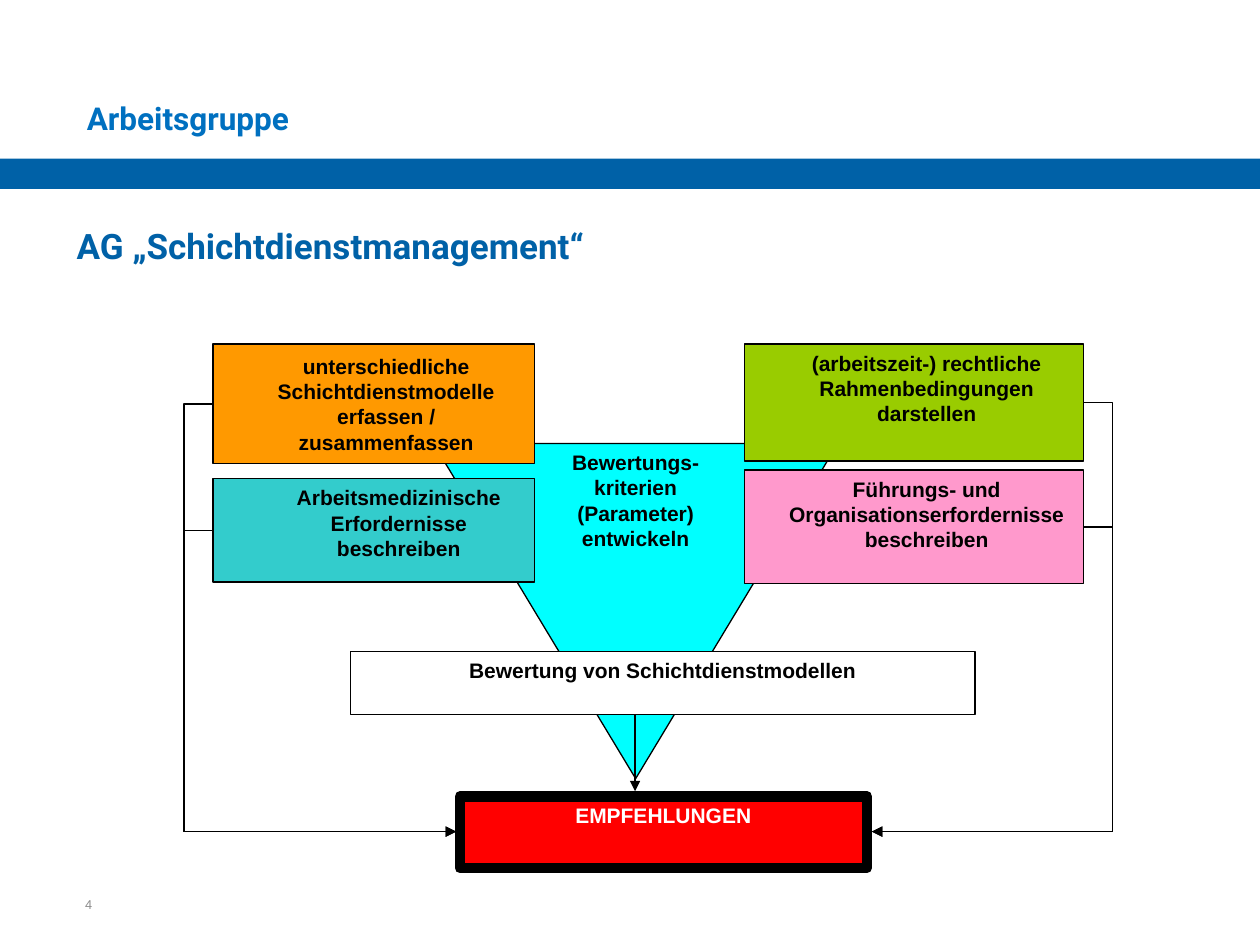
from lxml import etree
from pptx import Presentation
from pptx.dml.color import RGBColor
from pptx.enum.shapes import MSO_CONNECTOR, MSO_SHAPE
from pptx.enum.text import MSO_ANCHOR, PP_ALIGN
from pptx.oxml.ns import qn
from pptx.util import Inches, Pt

RECT = MSO_SHAPE.RECTANGLE
STEP = MSO_SHAPE.FLOWCHART_PROCESS
MERGE = MSO_SHAPE.FLOWCHART_MERGE
ELBOW = MSO_CONNECTOR.ELBOW
STRAIGHT = MSO_CONNECTOR.STRAIGHT
TOP, MIDDLE = MSO_ANCHOR.TOP, MSO_ANCHOR.MIDDLE
LEFT, CENTER, RIGHT = PP_ALIGN.LEFT, PP_ALIGN.CENTER, PP_ALIGN.RIGHT

BLACK, WHITE, BLUE = "000000", "FFFFFF", "0061A7"
LABEL = {"name": "Arial", "size": Pt(12), "bold": True}
TITLE = {"name": "Roboto", "size": Pt(20), "bold": True}
TOPIC = {"name": "Roboto", "size": Pt(18), "bold": True}
NUMBER = {"name": "Arial", "size": Pt(7.3), "bold": False}
PAD = (0.1, 0.05, 0.1, 0.05)


def paint(color, code):
    color.rgb = RGBColor.from_string(code)


def write(shape, text, style, code, align=CENTER, anchor=TOP, pad=PAD, indent=0):
    frame = shape.text_frame
    sides = ("margin_left", "margin_top", "margin_right", "margin_bottom")
    values = dict(zip(sides, map(Inches, pad)))
    values.update(word_wrap=True, vertical_anchor=anchor, text=text)
    for key, value in values.items():
        setattr(frame, key, value)
    for para in frame.paragraphs:
        para.alignment = align
        if indent:
            props = para._p.get_or_add_pPr()
            props.set("marL", str(Inches(indent)))
            props.set("indent", "0")
        for key, value in style.items():
            setattr(para.font, key, value)
        paint(para.font.color, code)


def block(slide, kind, box, fill, width=0):
    shape = slide.shapes.add_shape(kind, *map(Inches, box))
    shape.shadow.inherit = False
    shape.fill.solid()
    paint(shape.fill.fore_color, fill)
    if width:
        shape.line.width = Pt(width)
        paint(shape.line.color, BLACK)
    else:
        shape.line.fill.background()
    return shape


def note(slide, box, *args, **kwargs):
    write(slide.shapes.add_textbox(*map(Inches, box)), *args, **kwargs)


def arrow(slide, kind, start, end, bend=None):
    line = slide.shapes.add_connector(kind, *map(Inches, start + end))
    line.line.width = Pt(1)
    paint(line.line.color, BLACK)
    props = line._element.spPr
    tail = etree.SubElement(props.find(qn("a:ln")), qn("a:tailEnd"))
    tail.set("type", "triangle")
    etree.SubElement(props, qn("a:effectLst"))
    if bend is not None:
        ratio = (bend - start[0]) / (end[0] - start[0])
        guides = props.find(qn("a:prstGeom")).get_or_add_avLst()
        guide = etree.SubElement(guides, qn("a:gd"))
        guide.set("name", "adj1")
        guide.set("fmla", f"val {round(ratio * 100000)}")


def header(slide, box):
    x, y, w, h = box
    block(slide, RECT, (x, y + 1.26, w, 0.24), BLUE)
    note(slide, (x + 0.59, y + 0.74, 2.21, 0.4), "Arbeitsgruppe", TOPIC, "0070C0", LEFT)
    note(slide, (x + 0.51, y + 1.78, w - 0.94, h - 1.78),
         "AG „Schichtdienstmanagement“", TITLE, BLUE, LEFT, pad=(0.1, 0, 0, 0))


def diagram(slide, box):
    x, y, w, h = box
    gap = 0.23
    west, east = x + gap, x + w - gap
    lw, rw = 2.55, 2.69
    mid, goal = x + 3.58, y + 3.87

    funnel = block(slide, MERGE, (mid - 1.6, y + 0.79, 3.21, 2.66), "00FFFF", 0.75)
    write(funnel, "Bewertungs-kriterien (Parameter) entwickeln", LABEL, BLACK)

    tasks = [
        ((west, y, lw, 0.95), "FF9900",
         "unterschiedliche Schichtdienstmodelle\nerfassen / zusammenfassen",
         {"anchor": MIDDLE, "indent": 0.2}),
        ((east - rw, y, rw, 0.93), "99CC00",
         "(arbeitszeit-) rechtliche Rahmenbedingungen darstellen", {"indent": 0.2}),
        ((west, y + 1.07, lw, 0.82), "33CCCC",
         "Arbeitsmedizinische Erfordernisse beschreiben", {"indent": 0.4}),
        ((east - rw, y + 1, rw, 0.9), "FF99CC",
         "Führungs- und Organisationserfordernisse beschreiben",
         {"indent": 0.2, "pad": (0.04, 0.05, 0.04, 0.05)}),
    ]
    for place, fill, text, layout in tasks:
        write(block(slide, STEP, place, fill, 0.75), text, LABEL, BLACK, **layout)

    rating = block(slide, RECT, (x + 1.32, y + 2.44, 4.96, 0.5), WHITE, 0.75)
    write(rating, "Bewertung von Schichtdienstmodellen", LABEL, BLACK)
    result = block(slide, RECT, (x + 2.19, y + h - 0.57, 3.23, 0.57), "FF0000", 6)
    write(result, "EMPFEHLUNGEN", LABEL, WHITE)

    for place, *_ in tasks:
        level = place[1] + place[3] / 2
        if place[0] == west:
            arrow(slide, ELBOW, (west, level), (x + 2.16, goal), x)
        else:
            arrow(slide, ELBOW, (east, level), (x + 5.46, goal), x + w)
    arrow(slide, STRAIGHT, (mid, y + 2.94), (mid, y + 3.55))


def footer(slide, box):
    note(slide, box, "4", NUMBER, "8C8C8C", RIGHT, MIDDLE)


def main():
    deck = Presentation()
    deck.slide_width, deck.slide_height = Inches(10), Inches(7.5)
    slide = deck.slides.add_slide(deck.slide_layouts[6])
    header(slide, (0, 0, 10, 2.49))
    diagram(slide, (1.46, 2.73, 7.37, 4.16))
    footer(slide, (0.27, 6.98, 0.56, 0.4))
    deck.save("out.pptx")


if __name__ == "__main__":
    main()
